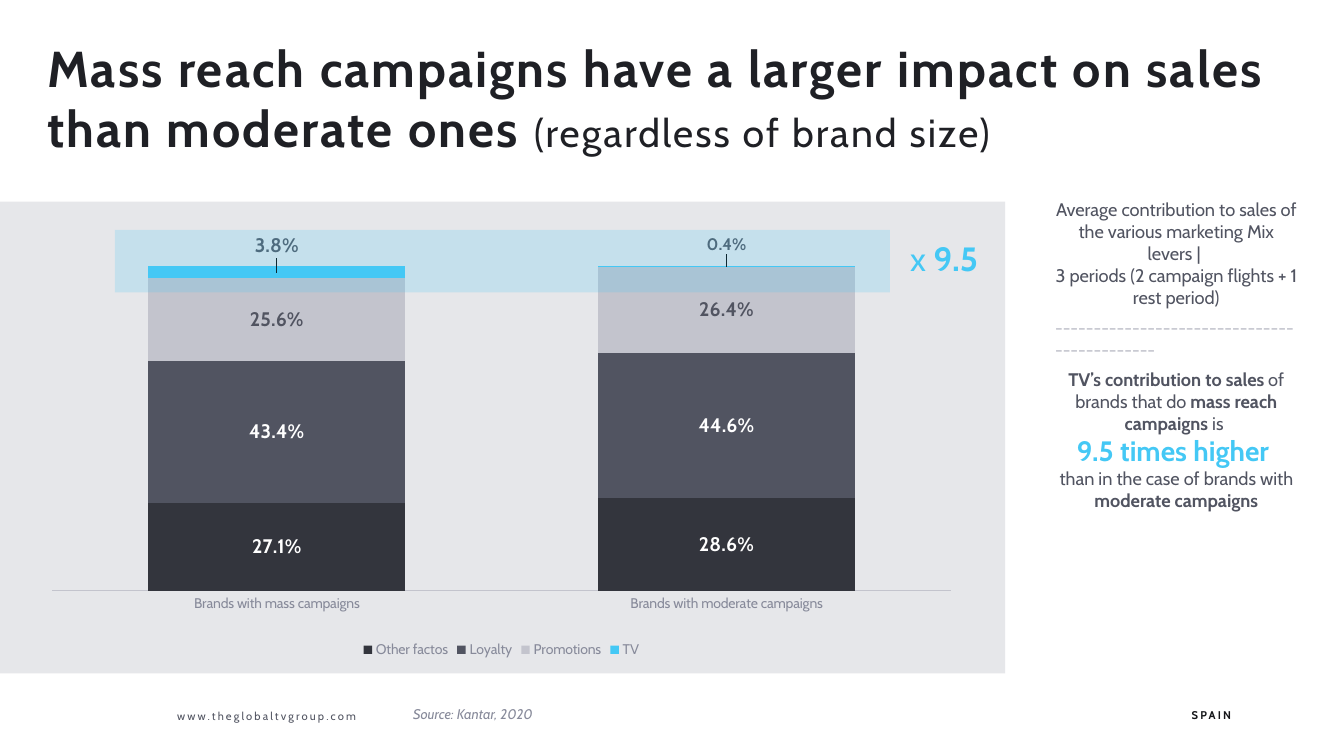
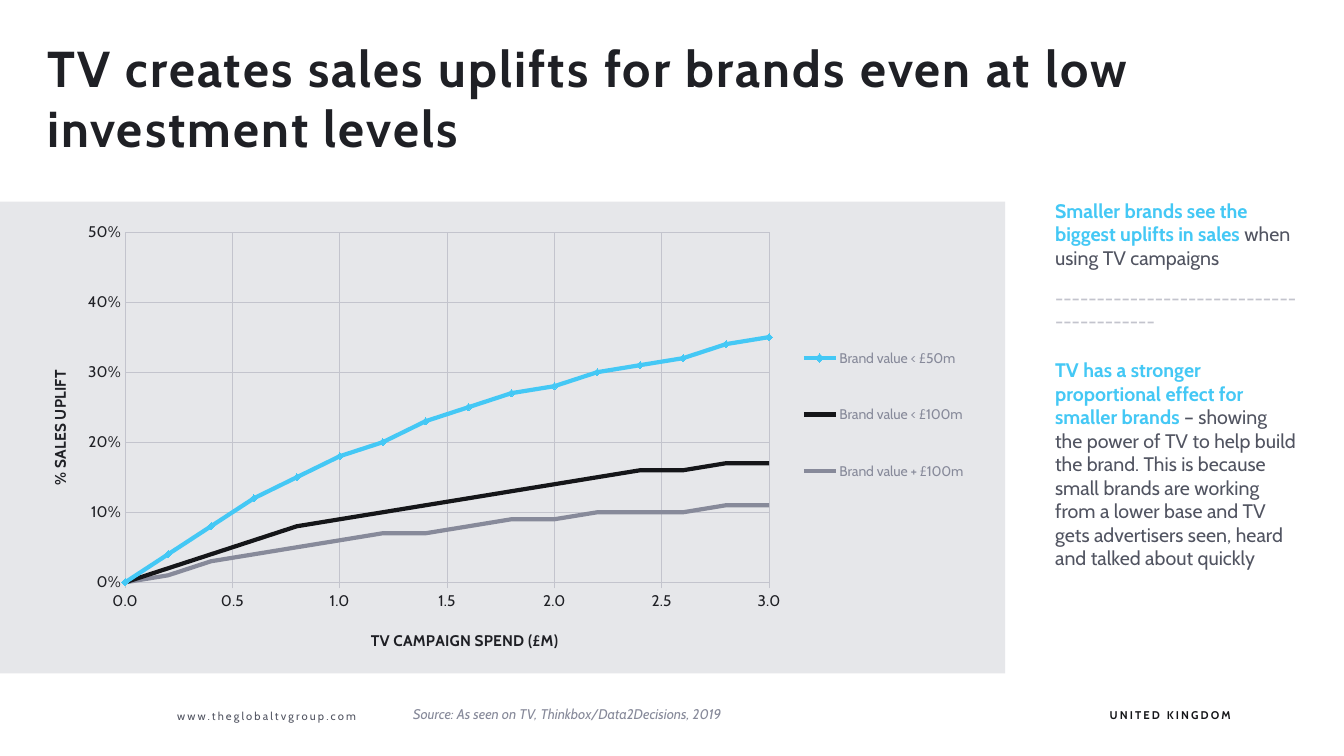
from copy import deepcopy

from pptx import Presentation
from pptx.chart.data import CategoryChartData, XyChartData
from pptx.dml.color import RGBColor
from pptx.enum.chart import (XL_CHART_TYPE, XL_LABEL_POSITION, XL_LEGEND_POSITION,
                             XL_MARKER_STYLE, XL_TICK_MARK)
from pptx.enum.shapes import MSO_SHAPE
from pptx.enum.text import MSO_ANCHOR, PP_ALIGN
from pptx.oxml import parse_xml
from pptx.oxml.ns import nsdecls, qn
from pptx.util import Pt

FONT = "Cabin"
WHITE = RGBColor(0xFF, 0xFF, 0xFF)
PANEL = RGBColor(0xE6, 0xE7, 0xEA)
SILVER = RGBColor(0xC3, 0xC4, 0xCD)
GREY = RGBColor(0x87, 0x8A, 0x9A)
SLATE = RGBColor(0x51, 0x54, 0x61)
CHARCOAL = RGBColor(0x33, 0x35, 0x3D)
INK = RGBColor(0x1F, 0x20, 0x25)
BLACK = RGBColor(0x15, 0x16, 0x19)
CYAN = RGBColor(0x44, 0xC8, 0xF5)
LEFT, CENTER, RIGHT = PP_ALIGN.LEFT, PP_ALIGN.CENTER, PP_ALIGN.RIGHT


def add_text(page, frame, paragraphs, anchor=MSO_ANCHOR.TOP, spacing=0, italic=False):
    """Paragraphs are (alignment, space after, runs); runs are (text, size, colour, bold)."""
    box = page.shapes.add_textbox(*map(Pt, frame))
    text_frame = box.text_frame
    text_frame.word_wrap = True
    text_frame.vertical_anchor = anchor
    for number, (alignment, space_after, spans) in enumerate(paragraphs):
        para = text_frame.add_paragraph() if number else text_frame.paragraphs[0]
        para.alignment = alignment
        para.space_after = Pt(space_after)
        for text, size, color, bold in spans:
            for line_number, line in enumerate(text.split("\n")):
                if line_number:
                    # The break takes the size of the text before it
                    para.add_line_break()
                    para._p[-1].append(deepcopy(span.font._element))
                if not line:
                    continue
                span = para.add_run()
                span.text = line
                span.font.name = FONT
                span.font.size = Pt(size)
                span.font.color.rgb = color
                span.font.bold = bold
                span.font.italic = italic
                if spacing:
                    span.font._element.set("spc", str(round(spacing * 100)))


def place(element, index, edges=True, inner=False, **fractions):
    """Give a chart part a manual layout, in fractions of the chart."""
    for layout in element.findall(qn("c:layout")):
        element.remove(layout)
    settings = [("layoutTarget", "inner")] if inner else []
    if edges:
        settings += [("xMode", "edge"), ("yMode", "edge")]
    settings += fractions.items()
    body = "".join(f'<c:{tag} val="{value}"/>' for tag, value in settings)
    element.insert(index, parse_xml(
        f'<c:layout {nsdecls("c")}><c:manualLayout>{body}</c:manualLayout></c:layout>'))


deck = Presentation()
deck.slide_width = Pt(960)
deck.slide_height = Pt(540)

# Wording of each slide: title, side column, source, country
slides = [
    ([("Mass reach campaigns have a larger impact on sales than moderate ones ", 36, INK, True),
      ("(regardless of brand size)", 28, INK, False)],
     [(CENTER, 6, [("Average contribution to sales of the various marketing Mix levers | \n"
                    "3 periods (2 campaign flights + 1 rest period)", 13, SLATE, False)]),
      (LEFT, 6, [("-" * 44, 13, SILVER, False)]),
      (CENTER, 6, [("TV’s contribution to sales ", 13, SLATE, True),
                   ("of brands that do ", 13, SLATE, False),
                   ("mass reach campaigns", 13, SLATE, True),
                   (" is \n", 13, SLATE, False),
                   ("9.5 times higher \n", 20, CYAN, True),
                   ("than in the case of brands with ", 13, SLATE, False),
                   ("moderate campaigns", 13, SLATE, True)])],
     "Source: Kantar, 2020", "SPAIN"),
    ([("TV creates sales uplifts for brands even at low investment levels", 36, INK, True)],
     [(LEFT, 12, [("Smaller brands see the biggest uplifts in sales ", 14, CYAN, True),
                  ("when using TV campaigns", 14, SLATE, False)]),
      (LEFT, 18, [("-" * 41, 14, SILVER, False)]),
      (LEFT, 6, [("TV has a stronger proportional effect for smaller brands ", 14, CYAN, True),
                 ("– showing the power of TV to help build the brand. This is because small "
                  "brands are working from a lower base and TV gets advertisers seen, heard "
                  "and talked about quickly", 14, SLATE, False)])],
     "Source: As seen on TV, Thinkbox/Data2Decisions, 2019", "UNITED KINGDOM"),
]

# Parts shared by both slides
pages = []
for title, side_column, source, country in slides:
    page = deck.slides.add_slide(deck.slide_layouts[6])
    pages.append(page)
    panel = page.shapes.add_shape(MSO_SHAPE.RECTANGLE, Pt(0), Pt(144), Pt(718), Pt(337))
    panel.shadow.inherit = False
    panel.fill.solid()
    panel.fill.fore_color.rgb = PANEL
    panel.line.fill.background()
    add_text(page, (26.6, 23, 906.5, 52.6), [(LEFT, 0, title)], spacing=1.5)
    add_text(page, (746.6, 138.2, 187.2, 342), side_column)
    add_text(page, (119.5, 502.6, 201, 17.3),
             [(LEFT, 0, [("www.theglobaltvgroup.com", 8, SLATE, False)])],
             MSO_ANCHOR.MIDDLE, 1.5)
    add_text(page, (288, 500.4, 545, 19.4), [(LEFT, 0, [(source, 10, GREY, False)])], italic=True)
    add_text(page, (679, 501.8, 207.4, 18), [(RIGHT, 0, [(country, 8, BLACK, True)])],
             MSO_ANCHOR.MIDDLE, 1.5)
sales_page, uplift_page = pages

# Stacked columns: contribution to sales
sales_data = CategoryChartData(number_format="0.0%")
sales_data.categories = ["Brands with mass campaigns", "Brands with moderate campaigns"]
levers = [
    ("Other factos", (0.271, 0.286), CHARCOAL, WHITE, 14),
    ("Loyalty", (0.434, 0.446), SLATE, WHITE, 14),
    ("Promotions", (0.256, 0.264), SILVER, SLATE, 14),
    ("TV", (0.038, 0.004), CYAN, SLATE, 12),
]
for name, shares, *_ in levers:
    sales_data.add_series(name, shares)
sales_chart = sales_page.shapes.add_chart(
    XL_CHART_TYPE.COLUMN_STACKED_100, Pt(26.6), Pt(162), Pt(663), Pt(311), sales_data).chart
sales_plot = sales_chart.plots[0]
sales_plot.gap_width = 75
sales_plot.overlap = 100
sales_plot.vary_by_categories = False
for series, (_, _, fill_color, label_color, label_size) in zip(sales_plot.series, levers):
    series.format.fill.solid()
    series.format.fill.fore_color.rgb = fill_color
    labels = series.data_labels
    labels.show_value = True
    labels.number_format = "0.0%"
    labels.number_format_is_linked = False
    labels.position = XL_LABEL_POSITION.CENTER
    labels.font.name = FONT
    labels.font.size = Pt(label_size)
    labels.font.bold = True
    labels.font.color.rgb = label_color

# The TV labels sit above their thin bars
tv_series = sales_plot.series[3]
for index, size in enumerate((14, 12)):
    label = tv_series.points[index].data_label
    label.position = XL_LABEL_POSITION.CENTER
    label.font.name = FONT
    label.font.size = Pt(size)
    label.font.bold = True
    label.font.color.rgb = SLATE
for label_element, rise in zip(tv_series._element.iter(qn("c:dLbl")), (-0.06, -0.05)):
    place(label_element, 1, edges=False, x=0, y=rise)

sales_chart.value_axis.visible = False
sales_chart.value_axis.has_major_gridlines = False
brand_axis = sales_chart.category_axis
brand_axis.major_tick_mark = XL_TICK_MARK.NONE
brand_axis.format.line.color.rgb = SILVER
brand_axis.format.line.width = Pt(0.75)

# Highlight across the TV bars
highlight = sales_page.shapes.add_shape(
    MSO_SHAPE.RECTANGLE, Pt(82), Pt(164.2), Pt(553.7), Pt(44.6))
highlight.shadow.inherit = False
highlight.fill.solid()
highlight.fill.fore_color.rgb = CYAN
highlight.line.fill.background()
tint = highlight._element.spPr.find(qn("a:solidFill"))[0]
tint.append(parse_xml(f'<a:alpha {nsdecls("a")} val="20000"/>'))
add_text(sales_page, (639.4, 166.3, 69.8, 35.3),
         [(CENTER, 6, [("x ", 24, CYAN, False), ("9.5", 24, CYAN, True)])])

# Smooth curves: sales uplift by campaign spend, in steps of 0.2
curves = [
    ("Brand value < £50m", CYAN, XL_MARKER_STYLE.DIAMOND,
     (0, 4, 8, 12, 15, 18, 20, 23, 25, 27, 28, 30, 31, 32, 34, 35, 35, 36, 37, 38, 38)),
    ("Brand value < £100m", BLACK, XL_MARKER_STYLE.NONE,
     (0, 2, 4, 6, 8, 9, 10, 11, 12, 13, 14, 15, 16, 16, 17, 17, 18, 18, 19, 19, 19)),
    ("Brand value + £100m", GREY, XL_MARKER_STYLE.NONE,
     (0, 1, 3, 4, 5, 6, 7, 7, 8, 9, 9, 10, 10, 10, 11, 11, 11, 12, 12, 12, 12)),
]
uplift_data = XyChartData(number_format="0%")
for name, _, _, percentages in curves:
    series_data = uplift_data.add_series(name)
    for step, percentage in enumerate(percentages):
        series_data.add_data_point(step / 5, percentage / 100)
uplift_chart = uplift_page.shapes.add_chart(
    XL_CHART_TYPE.XY_SCATTER_SMOOTH, Pt(26.6), Pt(147.6), Pt(675.4), Pt(320.4),
    uplift_data).chart
for series, (_, color, marker_style, _) in zip(uplift_chart.plots[0].series, curves):
    series.smooth = True
    series.format.line.color.rgb = color
    series.format.line.width = Pt(3)
    series.marker.style = marker_style
    if marker_style != XL_MARKER_STYLE.NONE:
        series.marker.size = 5
        series.marker.format.fill.solid()
        series.marker.format.fill.fore_color.rgb = color
        series.marker.format.line.fill.background()

spend_axis, uplift_axis = uplift_chart.category_axis, uplift_chart.value_axis
for axis, heading, top, unit, number_format, tick, corner in (
        (spend_axis, "TV CAMPAIGN SPEND (£M)", 3, 0.5, "0.0", XL_TICK_MARK.OUTSIDE, (0.35, 0.94)),
        (uplift_axis, "% SALES UPLIFT", 0.5, 0.1, "0%", XL_TICK_MARK.NONE, (0.01, 0.36))):
    axis.minimum_scale = 0
    axis.maximum_scale = top
    axis.major_unit = unit
    axis.major_tick_mark = tick
    axis.has_major_gridlines = True
    for line in (axis.format.line, axis.major_gridlines.format.line):
        line.color.rgb = SILVER
        line.width = Pt(0.75)
    axis.tick_labels.number_format = number_format
    axis.tick_labels.number_format_is_linked = False
    heading_frame = axis.axis_title.text_frame
    heading_frame.text = heading
    heading_font = heading_frame.paragraphs[0].runs[0].font
    heading_font.name = FONT
    heading_font.size = Pt(11)
    heading_font.bold = True
    heading_font.color.rgb = INK
    place(axis.axis_title._element, 1, x=corner[0], y=corner[1])
uplift_heading = uplift_axis.axis_title.text_frame._txBody.bodyPr
uplift_heading.set("rot", "-5400000")
uplift_heading.set("vert", "horz")

# Fonts, legends and plot areas of both charts
for chart, axes, size, color, position, (x, y, w, h) in (
        (sales_chart, [brand_axis], 10, GREY, XL_LEGEND_POSITION.BOTTOM,
         (0.016, 0.09, 0.969, 0.746)),
        (uplift_chart, [spend_axis, uplift_axis], 11, INK, XL_LEGEND_POSITION.RIGHT,
         (0.093, 0.057, 0.681, 0.783))):
    chart.has_title = False
    chart.font.name = FONT
    chart.font.size = Pt(10)
    chart.font.color.rgb = INK
    chart.has_legend = True
    chart.legend.position = position
    chart.legend.include_in_layout = False
    for font, font_size, font_color in (
            [(chart.legend.font, 10, GREY)]
            + [(axis.tick_labels.font, size, color) for axis in axes]):
        font.name = FONT
        font.size = Pt(font_size)
        font.color.rgb = font_color
    place(chart._chartSpace.chart.plotArea, 0, inner=True, x=x, y=y, w=w, h=h)
place(uplift_chart.legend._element, 1, x=0.8, y=0.23, w=0.19, h=0.47)

deck.save("out.pptx")
